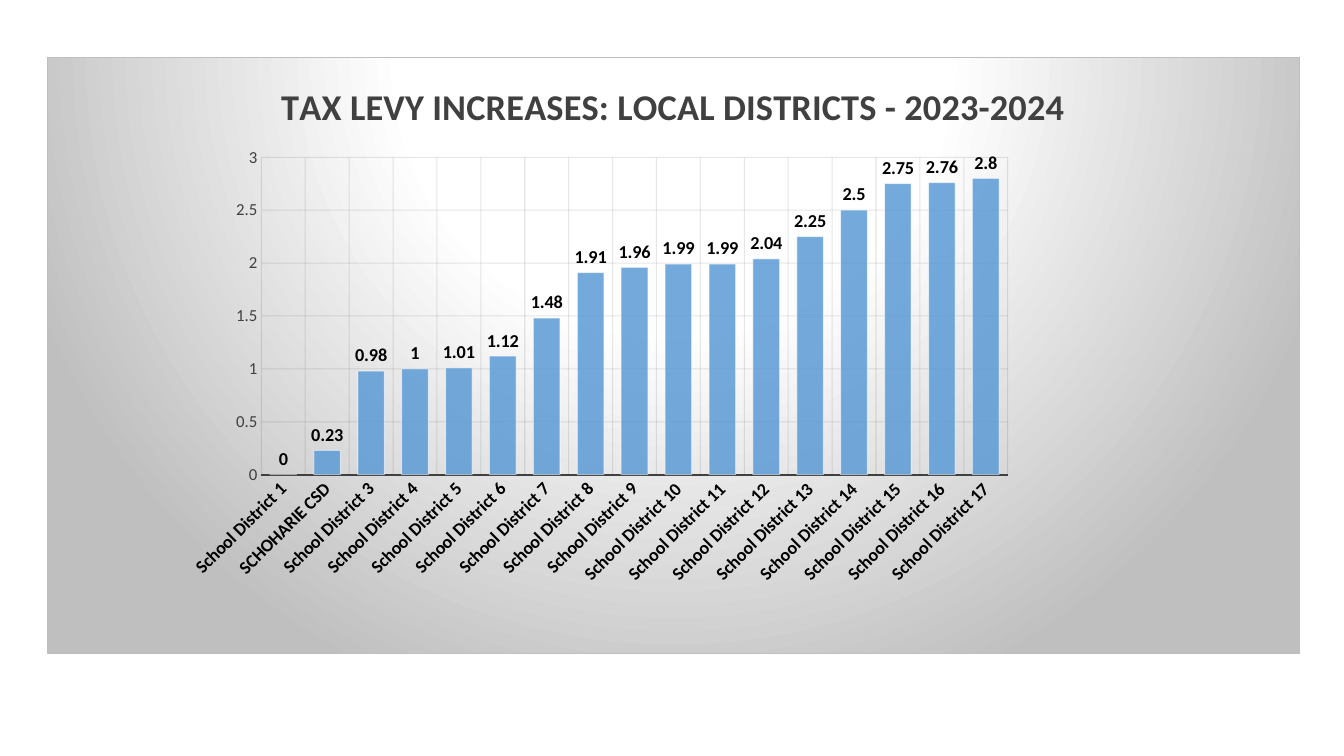
from dataclasses import dataclass

from lxml.etree import _Element as Node
from pptx import Presentation
from pptx.chart.data import CategoryChartData as ChartData
from pptx.dml.color import RGBColor as Rgb
from pptx.enum.chart import XL_CHART_TYPE as Kind
from pptx.enum.chart import XL_LABEL_POSITION as Spot
from pptx.enum.chart import XL_TICK_MARK as Tick
from pptx.oxml import parse_xml
from pptx.oxml.ns import nsdecls
from pptx.util import Emu, Pt


@dataclass(frozen=True)
class Theme:
    face: str = "Calibri"
    white: str = "FFFFFF"
    edge: str = "BFBFBF"
    bar: str = "5B9BD5"
    grid: str = "0D0D0D"
    dark: str = "404040"
    black: str = "000000"
    title: float = 26
    label: float = 13
    cat: float = 12.9
    val: float = 12
    base: float = 10
    thin: float = 0.75
    thick: float = 1.5


@dataclass(frozen=True)
class Box:
    left: int
    top: int
    width: int
    height: int


@dataclass(frozen=True)
class Levy:
    name: str
    rate: float


THEME = Theme()
PANEL = Box(47, 57, 1253, 597)
PLOT = Box(214, 100, 747, 318)  # measured from the panel's corner
RATES = [0, 0.23, 0.98, 1, 1.01, 1.12, 1.48, 1.91, 1.96,
         1.99, 1.99, 2.04, 2.25, 2.5, 2.75, 2.76, 2.8]
LEVIES = [Levy("SCHOHARIE CSD" if n == 2 else f"School District {n}", rate)
          for n, rate in enumerate(RATES, 1)]


def px(size: int) -> Emu:
    return Emu(round(size * 914400 / 100.8))


def style(font, size: float, color: str, bold: bool = False) -> None:
    font.name, font.size, font.bold = THEME.face, Pt(size), bold
    font.color.rgb = Rgb.from_string(color)


def stroke(line, color: str, width: float) -> None:
    line.color.rgb = Rgb.from_string(color)
    line.width = Pt(width)


def fade(root: Node, where: str, share: int) -> None:
    """Set the opacity, in percent, of the colours found."""
    for color in root.xpath(f"{where}//a:srgbClr"):
        color.append(parse_xml(
            f'<a:alpha {nsdecls("a")} val="{share * 1000}"/>'))


def paint(root: Node) -> None:
    """Give the panel its round gradient and border."""
    stops = [(0, THEME.white), (39, THEME.white), (100, THEME.edge)]
    marks = "".join(
        f'<a:gs pos="{at * 1000}"><a:srgbClr val="{color}"/></a:gs>'
        for at, color in stops)
    root.xpath("c:chart")[0].addnext(parse_xml(
        f'<c:spPr {nsdecls("c", "a")}><a:gradFill><a:gsLst>{marks}</a:gsLst>'
        '<a:path path="circle"><a:fillToRect l="50000" t="-80000" '
        'r="50000" b="180000"/></a:path></a:gradFill>'
        f'<a:ln w="{Pt(THEME.thin)}"><a:solidFill>'
        f'<a:srgbClr val="{THEME.edge}"/></a:solidFill></a:ln></c:spPr>'))


def place(root: Node) -> None:
    """Fix the inner plot area within the panel."""
    area = root.xpath("c:chart/c:plotArea")[0]
    for old in area.xpath("c:layout"):
        area.remove(old)
    parts = {"x": PLOT.left / PANEL.width, "y": PLOT.top / PANEL.height,
             "w": PLOT.width / PANEL.width, "h": PLOT.height / PANEL.height}
    modes = "".join(f'<c:{key}Mode val="edge"/>' for key in "xy")
    sizes = "".join(f'<c:{key} val="{part:.4f}"/>'
                    for key, part in parts.items())
    area.insert(0, parse_xml(
        f'<c:layout {nsdecls("c")}><c:manualLayout>'
        f'<c:layoutTarget val="inner"/>{modes}{sizes}'
        '</c:manualLayout></c:layout>'))


def add_levies(slide) -> None:
    data = ChartData()
    data.categories = [levy.name for levy in LEVIES]
    data.add_series("Series 1", [levy.rate for levy in LEVIES])
    chart = slide.shapes.add_chart(
        Kind.COLUMN_CLUSTERED, px(PANEL.left), px(PANEL.top),
        px(PANEL.width), px(PANEL.height), data).chart
    root = chart.element
    chart.has_legend = False
    style(chart.font, THEME.base, THEME.black)

    # Title
    chart.has_title = True
    run = chart.chart_title.text_frame.paragraphs[0].add_run()
    run.text = "TAX LEVY INCREASES: LOCAL DISTRICTS - 2023-2024"
    style(run.font, THEME.title, THEME.dark, True)
    chart.chart_title.include_in_layout = False

    # Axes
    cat, val = chart.category_axis, chart.value_axis
    for axis in (cat, val):
        axis.major_tick_mark = axis.minor_tick_mark = Tick.NONE
        axis.has_major_gridlines = True
        stroke(axis.major_gridlines.format.line, THEME.grid, THEME.thin)
    fade(root, ".//c:majorGridlines", 10)
    style(cat.tick_labels.font, THEME.cat, THEME.black, True)
    style(val.tick_labels.font, THEME.val, THEME.dark)
    root.xpath(".//c:catAx/c:txPr/a:bodyPr")[0].set("rot", "-2700000")
    stroke(cat.format.line, THEME.dark, THEME.thick)
    val.format.line.fill.background()
    val.minimum_scale, val.maximum_scale, val.major_unit = 0, 3, 0.5

    # Bars and their values
    plot = chart.plots[0]
    plot.gap_width = 65
    plot.vary_by_categories = False
    bars = plot.series[0]
    bars.format.fill.solid()
    bars.format.fill.fore_color.rgb = Rgb.from_string(THEME.bar)
    stroke(bars.format.line, THEME.white, THEME.thin)
    fade(root, ".//c:ser/c:spPr/a:solidFill", 85)
    fade(root, ".//c:ser/c:spPr/a:ln", 50)
    labels = bars.data_labels
    labels.show_value = True
    labels.position = Spot.OUTSIDE_END
    style(labels.font, THEME.label, THEME.black, True)

    paint(root)
    place(root)


def main() -> None:
    deck = Presentation()
    deck.slide_width, deck.slide_height = px(1344), px(756)
    add_levies(deck.slides.add_slide(deck.slide_layouts[6]))
    deck.save("out.pptx")


if __name__ == "__main__":
    main()
